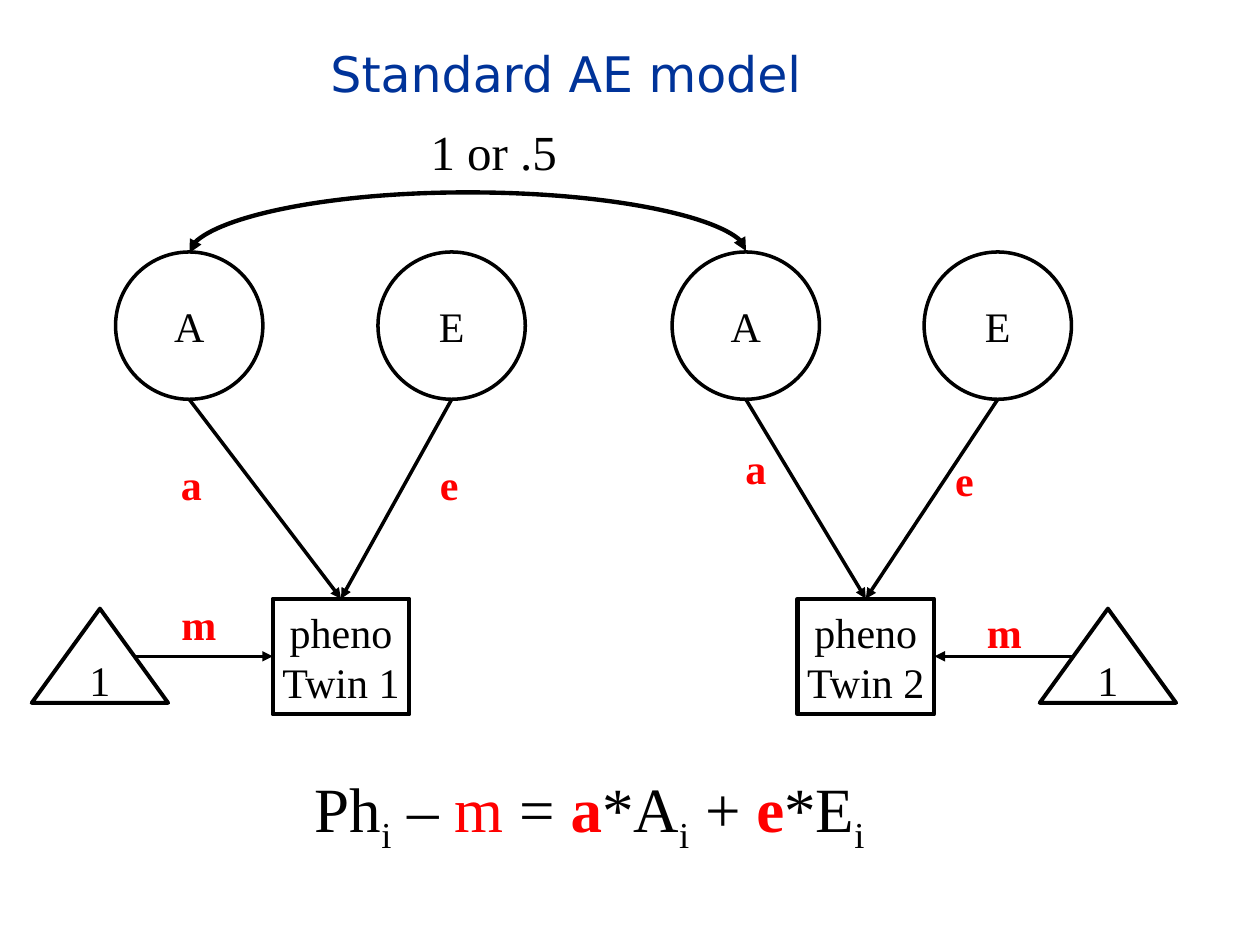
from lxml.etree import SubElement
from pptx import Presentation
from pptx.dml.color import RGBColor
from pptx.enum.shapes import MSO_CONNECTOR, MSO_SHAPE
from pptx.enum.text import MSO_ANCHOR, PP_ALIGN
from pptx.oxml.ns import qn
from pptx.util import Cm, Pt

BLACK = RGBColor(0x00, 0x00, 0x00)
WHITE = RGBColor(0xFF, 0xFF, 0xFF)
RED = RGBColor(0xFF, 0x00, 0x00)
BLUE = RGBColor(0x00, 0x33, 0x99)
SERIF = "Times New Roman"

prs = Presentation()
prs.slide_width, prs.slide_height = Cm(25.4), Cm(19.05)
s = prs.slides.add_slide(prs.slide_layouts[6])


def add_text(text, x, y, w, h, size=24, color=BLACK, bold=False, font=SERIF,
             align=PP_ALIGN.CENTER, wrap=True, shape=None, line=2):
    """Add a text box, or an outlined white shape holding centred text."""
    box = Cm(x), Cm(y), Cm(w), Cm(h)
    if shape is None:
        sp = s.shapes.add_textbox(*box)
    else:
        sp = s.shapes.add_shape(shape, *box)
        sp.shadow.inherit = False
        sp.fill.solid()
        sp.fill.fore_color.rgb = WHITE
        sp.line.color.rgb = BLACK
        sp.line.width = Pt(line)
    tf = sp.text_frame
    tf.word_wrap = wrap
    tf.vertical_anchor = MSO_ANCHOR.MIDDLE
    tf.text = text
    for p in tf.paragraphs:
        p.alignment = align
        p.font.name, p.font.size, p.font.bold = font, Pt(size), bold
        p.font.color.rgb = color
    return tf


def add_arrow(kind, x1, y1, x2, y2, width=2, ends=("tailEnd",)):
    cxn = s.shapes.add_connector(kind, Cm(x1), Cm(y1), Cm(x2), Cm(y2))
    cxn.line.color.rgb = BLACK
    cxn.line.width = Pt(width)
    ln = cxn.line._get_or_add_ln()
    for end in ends:
        SubElement(ln, qn("a:" + end), type="triangle")
    SubElement(cxn._element.spPr, qn("a:effectLst"))
    return cxn


# Title
add_text("Standard AE model", 0.61, 0.84, 21.59, 1.27, size=28, color=BLUE,
         font="DejaVu Sans")

# Each twin: phenotype box, latent circles, mean triangle and their paths
CIRCLE, CIRCLE_Y = 2.97, 5.08
BOX_W, BOX_H, BOX_Y = 2.75, 2.33, 12.07
MEAN_Y = 13.23
twins = [
    # label, box x, A x, E x, triangle x, mean path from x, to x
    ("Twin 1", 5.5, 2.33, 7.62, 0.64, 2.69, 5.5),
    ("Twin 2", 16.08, 13.55, 18.63, 20.96, 21.64, 18.84),
]
for label, box_x, a_x, e_x, mean_x, from_x, to_x in twins:
    add_text("pheno\n" + label, box_x, BOX_Y, BOX_W, BOX_H, wrap=False,
             shape=MSO_SHAPE.RECTANGLE, line=2.5)
    for name, x in (("A", a_x), ("E", e_x)):
        add_text(name, x, CIRCLE_Y, CIRCLE, CIRCLE, wrap=False,
                 shape=MSO_SHAPE.OVAL)
        add_arrow(MSO_CONNECTOR.STRAIGHT, x + CIRCLE / 2, CIRCLE_Y + CIRCLE,
                  box_x + BOX_W / 2, BOX_Y)
    add_text("1", mean_x, 12.27, BOX_W, 1.9, wrap=False,
             shape=MSO_SHAPE.ISOSCELES_TRIANGLE, line=2.25)
    add_arrow(MSO_CONNECTOR.STRAIGHT, from_x, MEAN_Y, to_x, MEAN_Y)

# Correlation arc between the A circles: a thin connector turned a quarter
arc = add_arrow(MSO_CONNECTOR.CURVE, 9.45, 10.69, 9.41, -0.53, width=2.5,
                ends=("headEnd", "tailEnd"))
arc._element.spPr.find(qn("a:xfrm")).set("rot", "5400000")
guides = arc._element.spPr.find(qn("a:prstGeom")).find(qn("a:avLst"))
SubElement(guides, qn("a:gd"), name="adj1", fmla="val 3050000")

# Path labels
for name, x, y, w in (("a", 2.31, 9.12, 3.1), ("e", 8.61, 9.12, 0.89),
                      ("a", 13.79, 8.79, 2.9), ("e", 19, 9.04, 0.89),
                      ("m ", 2.03, 11.94, 4.17), ("m", 18.16, 12.09, 4.17)):
    add_text(name, x, y, w, 1.27, color=RED, bold=True, wrap=w > 1)
add_text("1 or .5", 8.43, 2.31, 3.1, 1.45, size=28, align=PP_ALIGN.LEFT,
         wrap=False)

# Equation
tf = add_text("", 6.1, 15.49, 12.07, 1.8, size=36, align=PP_ALIGN.LEFT,
              wrap=False)
p = tf.paragraphs[0]
for text, style in (("Ph", ""), ("i", "sub"), (" – ", ""), ("m ", "red"),
                    ("= ", ""), ("a", "path"), ("*A", ""), ("i", "sub"),
                    (" + ", ""), ("e", "path"), ("*E", ""), ("i", "sub")):
    r = p.add_run()
    r.text = text
    if style == "sub":
        r.font._element.set("baseline", "-25000")
    elif style:
        r.font.color.rgb = RED
        r.font.bold = style == "path"

prs.save("out.pptx")
